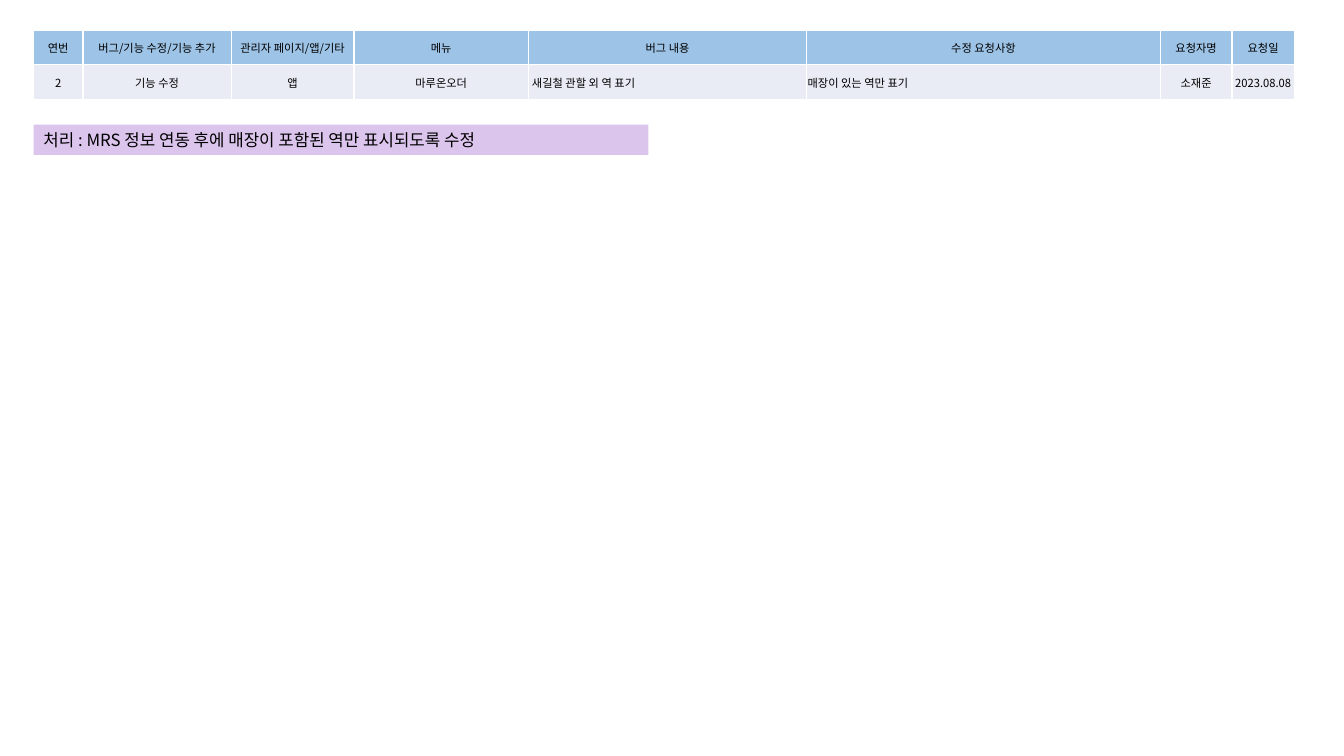
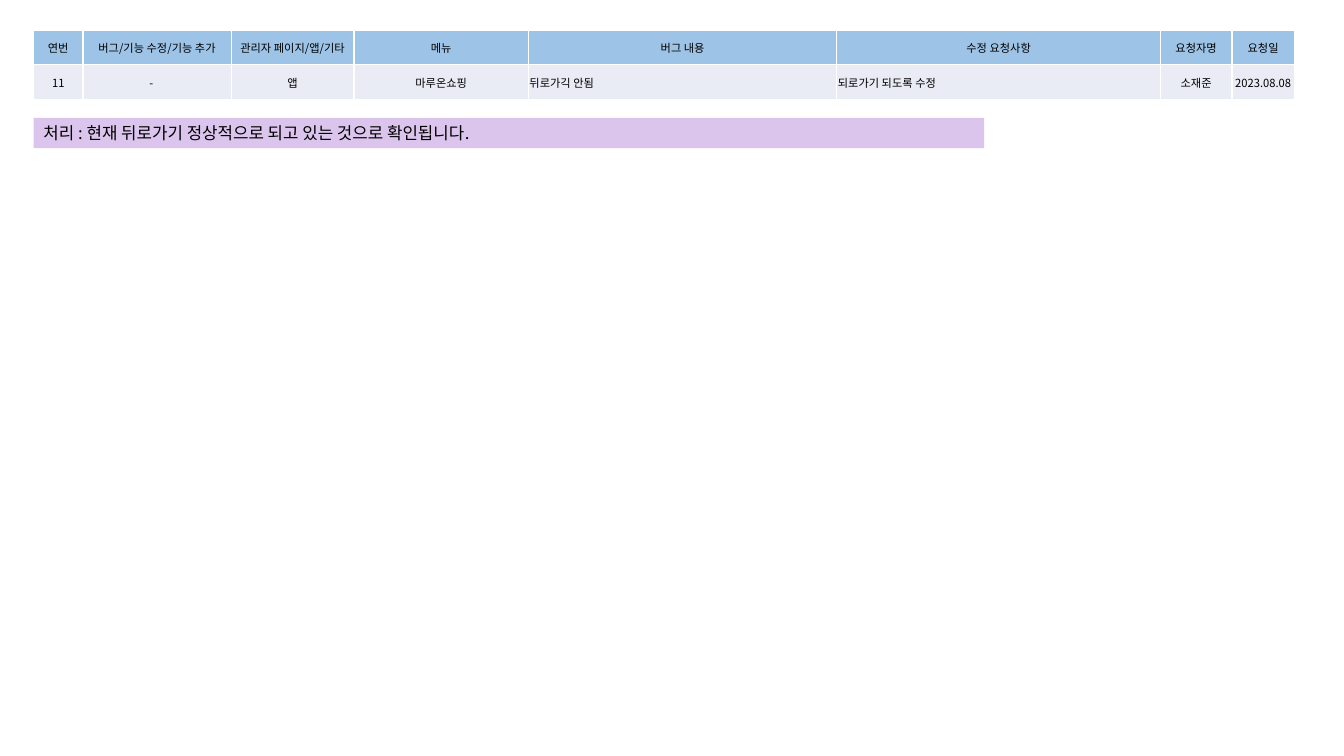
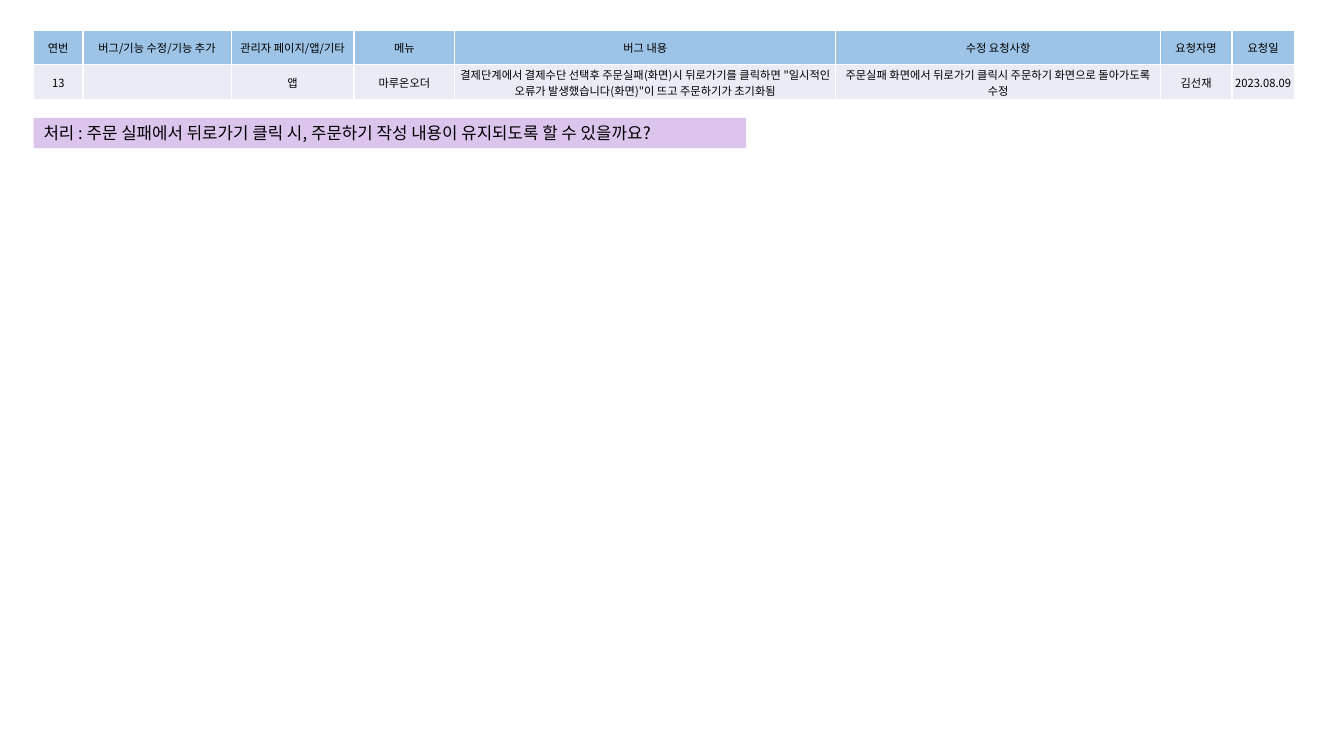
from dataclasses import dataclass
from typing import Any

from lxml.etree import SubElement
from pptx import Presentation
from pptx.dml.color import RGBColor
from pptx.enum.shapes import MSO_SHAPE
from pptx.enum.text import MSO_ANCHOR, MSO_AUTO_SIZE, PP_ALIGN
from pptx.oxml.ns import qn
from pptx.util import Inches, Pt

WIDE, HIGH = Inches(13.33), Inches(7.5)
LEFT, TOP = 0.025, 0.04  # shares of the slide
SPAN = 93.75 / 100 * WIDE  # table width; columns and notes are percents of it
ROWS = (Inches(0.34), Inches(0.35))
HEAD, BODY, NOTE, LINE, INK = "9DC3E6", "E9EBF5", "DCC5ED", "FFFFFF", "000000"
FONT = "Noto Sans CJK KR"
LABELS = ("연번", "버그/기능 수정/기능 추가", "관리자 페이지/앱/기타", "메뉴",
          "버그 내용", "수정 요청사항", "요청자명", "요청일")
LEAD, MIDDLE, TAIL = (3.92, 11.76, 9.76), 64, (5.68, 4.96)
LONG = (4, 5)  # columns of running text
CELL = {"margin_left": Inches(0.01), "margin_right": Inches(0.01),
        "margin_top": Inches(0.01), "margin_bottom": 0,
        "vertical_anchor": MSO_ANCHOR.MIDDLE}


@dataclass(frozen=True)
class Issue:
    """One request; menu, bug and wide are percents of the table width."""
    cells: tuple[str, ...]
    menu: float
    bug: float
    reply: str
    wide: float
    top: float
    align: PP_ALIGN = PP_ALIGN.LEFT


ISSUES = (
    Issue(("2", "기능 수정", "앱", "마루온오더", " 새길철 관할 외 역 표기",
           "매장이 있는 역만 표기", "소재준", "2023.08.08"),
          13.84, 22.08,
          "처리 : MRS 정보 연동 후에 매장이 포함된 역만 표시되도록 수정", 48.8, 0.165),
    Issue(("11", "-　", "앱", "마루온쇼핑", "뒤로가긱 안됨",
           "되로가기 되도록 수정", "소재준", "2023.08.08"),
          13.84, 24.48,
          "처리 : 현재 뒤로가기 정상적으로 되고 있는 것으로 확인됩니다.", 75.44, 0.156),
    Issue(("13", "", "앱", "마루온오더",
           '결제단계에서 결제수단 선택후 주문실패(화면)시 뒤로가기를 클릭하면 '
           '"일시적인 오류가 발생했습니다(화면)"이 뜨고 주문하기가 초기화됨',
           "주문실패 화면에서 뒤로가기 클릭시 주문하기 화면으로 돌아가도록 수정",
           "김선재", "2023.08.09"),
          8, 30.24,
          "처리 : 주문 실패에서 뒤로가기 클릭 시, 주문하기 작성 내용이 유지되도록 할 수 있을까요?",
          56.56, 0.156, PP_ALIGN.CENTER),
)


def paint(fill: Any, tone: str) -> None:
    fill.solid()
    fill.fore_color.rgb = RGBColor.from_string(tone)


def write(frame: Any, text: str, size: int, align: PP_ALIGN) -> None:
    para = frame.paragraphs[0]
    para.alignment = align
    if not text:
        SubElement(para._p, qn("a:endParaRPr"), sz=str(size * 100))
        return
    run = para.add_run()
    run.text = text
    for name, value in {"name": FONT, "size": Pt(size)}.items():
        setattr(run.font, name, value)
    paint(run.font.fill, INK)
    SubElement(run.font._element, qn("a:ea"), typeface=FONT)


def edge(cell: Any) -> None:
    """Put a thin line on all four sides, ahead of the cell's fill."""
    props = cell._tc.get_or_add_tcPr()
    for place, side in enumerate(("lnL", "lnR", "lnT", "lnB")):
        line = SubElement(props, qn(f"a:{side}"), w=str(Pt(1)))
        SubElement(SubElement(line, qn("a:solidFill")), qn("a:srgbClr"), val=LINE)
        props.insert(place, line)


def add_grid(slide: Any, issue: Issue) -> None:
    ask = MIDDLE - issue.menu - issue.bug
    cols = (*LEAD, issue.menu, issue.bug, ask, *TAIL)
    table = slide.shapes.add_table(
        len(ROWS), len(cols), int(LEFT * WIDE), int(TOP * HIGH),
        int(SPAN), sum(ROWS)).table
    for col, part in zip(table.columns, cols):
        col.width = int(part / 100 * SPAN)
    for r, (texts, tone) in enumerate(((LABELS, HEAD), (issue.cells, BODY))):
        table.rows[r].height = ROWS[r]
        for c, text in enumerate(texts):
            cell = table.cell(r, c)
            for name, value in CELL.items():
                setattr(cell, name, value)
            paint(cell.fill, tone)
            edge(cell)
            align = issue.align if r and c in LONG else PP_ALIGN.CENTER
            write(cell.text_frame, text, 8, align)


def add_note(slide: Any, issue: Issue) -> None:
    box = slide.shapes.add_shape(
        MSO_SHAPE.RECTANGLE, int(LEFT * WIDE), int(issue.top * HIGH),
        int(issue.wide / 100 * SPAN), int(0.04 * HIGH))
    box.shadow.inherit = False
    box.line.fill.background()
    paint(box.fill, NOTE)
    frame = box.text_frame
    style = {"word_wrap": True, "vertical_anchor": MSO_ANCHOR.TOP,
             "auto_size": MSO_AUTO_SIZE.SHAPE_TO_FIT_TEXT}
    for name, value in style.items():
        setattr(frame, name, value)
    write(frame, issue.reply, 12, PP_ALIGN.LEFT)


def main() -> None:
    deck = Presentation()
    deck.slide_width, deck.slide_height = WIDE, HIGH
    for issue in ISSUES:
        slide = deck.slides.add_slide(deck.slide_layouts[6])
        add_grid(slide, issue)
        add_note(slide, issue)
    deck.save("out.pptx")


if __name__ == "__main__":
    main()
